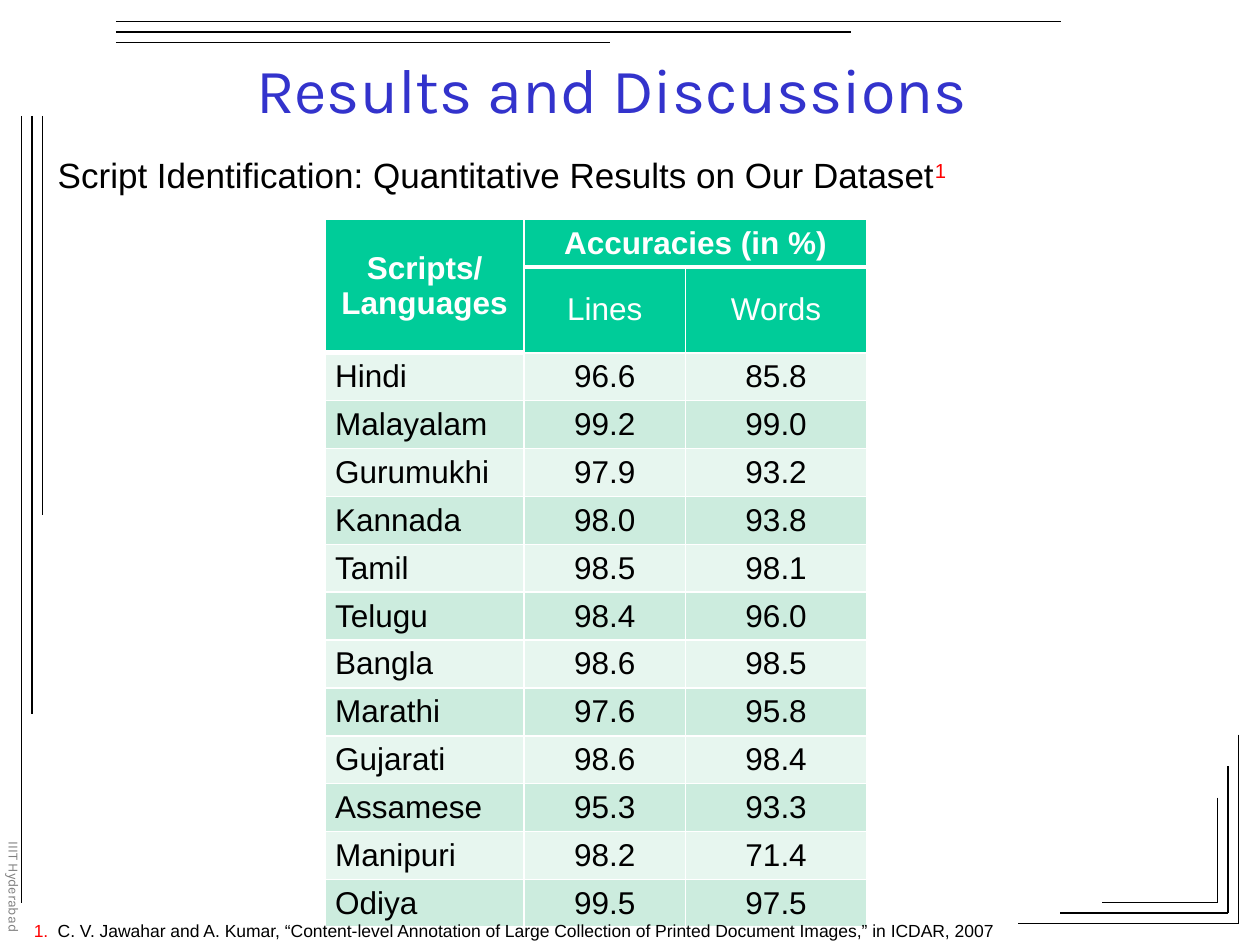
from lxml import etree
from pptx import Presentation
from pptx.dml.color import RGBColor
from pptx.enum.shapes import MSO_CONNECTOR
from pptx.enum.text import MSO_ANCHOR, PP_ALIGN
from pptx.oxml.ns import qn
from pptx.util import Inches, Pt

LINE = MSO_CONNECTOR.STRAIGHT
MIDDLE = MSO_ANCHOR.MIDDLE
LEFT, CENTER = PP_ALIGN.LEFT, PP_ALIGN.CENTER
BLACK, WHITE, RED, BLUE, GRAY = "000000", "FFFFFF", "FF0000", "3333CC", "808080"
GREEN, BANDS = "00CC99", ("E7F6EF", "CCECDE")
STEP = 1 / 12
SCORES = [
    ("Hindi", "96.6", "85.8"),
    ("Malayalam", "99.2", "99.0"),
    ("Gurumukhi", "97.9", "93.2"),
    ("Kannada", "98.0", "93.8"),
    ("Tamil", "98.5", "98.1"),
    ("Telugu", "98.4", "96.0"),
    ("Bangla", "98.6", "98.5"),
    ("Marathi", "97.6", "95.8"),
    ("Gujarati", "98.6", "98.4"),
    ("Assamese", "95.3", "93.3"),
    ("Manipuri", "98.2", "71.4"),
    ("Odiya", "99.5", "97.5"),
]


def color(value):
    """Turn a hex string into a colour."""
    return RGBColor.from_string(value)


def style(run, size, ink, face="Arial", bold=False):
    """Set the font of one run."""
    run.font.size, run.font.name, run.font.bold = Pt(size), face, bold
    run.font.color.rgb = color(ink)


def add_rule(slide, x1, y1, x2, y2):
    """Draw one thin black line."""
    rule = slide.shapes.add_connector(LINE, *map(Inches, (x1, y1, x2, y2)))
    rule.line.color.rgb = color(BLACK)
    rule.line.width = Pt(0.75)
    etree.SubElement(rule._element.spPr, qn("a:effectLst"))


def add_top(slide, x, y, widths):
    """Stack level rules downward from a corner."""
    for i, width in enumerate(widths):
        add_rule(slide, x, y + i * STEP, x + width, y + i * STEP)


def add_side(slide, x, y, heights):
    """Set upright rules rightward from a corner."""
    for i, height in enumerate(heights):
        add_rule(slide, x + i * STEP, y, x + i * STEP, y + height)


def add_corner(slide, x, y, width, height):
    """Nest three right angles into the bottom right of a box."""
    for i in range(3):
        right, low = x + width - i * STEP, y + height - i * STEP
        add_rule(slide, x + i * 4 * STEP, low, right, low)
        add_rule(slide, right, y + i * 3 * STEP, right, low)


def add_text(slide, box, parts, size, face="Arial", align=LEFT):
    """Place one paragraph of coloured parts in a box."""
    frame = slide.shapes.add_textbox(*map(Inches, box)).text_frame
    frame.word_wrap = True
    para = frame.paragraphs[0]
    para.alignment = align
    for text, ink in parts:
        run = para.add_run()
        run.text = text
        style(run, size, ink, face)
    return frame


def add_title(slide, box):
    """Place the centred title."""
    parts = [("Results and Discussions", BLUE)]
    add_text(slide, box, parts, 36, "Karla", CENTER).vertical_anchor = MIDDLE


def add_lead(slide, box):
    """Place the subtitle with its raised note mark."""
    text = "Script Identification: Quantitative Results on Our Dataset"
    frame = add_text(slide, box, [(text, BLACK), ("1", RED)], 20)
    frame.paragraphs[0].runs[1].font._element.set("baseline", "30000")


def add_label(slide, box):
    """Place the upright label at the left edge."""
    frame = add_text(slide, box, [("IIIT Hyderabad", GRAY)], 8, "Karla")
    frame._txBody.bodyPr.set("vert", "eaVert")


def add_note(slide, box):
    """Place the reference with a hanging number."""
    text = (
        "C. V. Jawahar and A. Kumar, “Content-level Annotation of Large "
        "Collection of Printed Document Images,” in ICDAR, 2007"
    )
    frame = add_text(slide, box, [("1.\t", RED), (text, BLACK)], 10)
    props = frame.paragraphs[0]._p.get_or_add_pPr()
    props.set("marL", str(Inches(0.19)))
    props.set("indent", str(-Inches(0.19)))


def set_edges(cell, low):
    """Draw white borders round a cell, the lower one of a given width."""
    props = cell._tc.get_or_add_tcPr()
    for i, (side, width) in enumerate(zip("LRTB", (1, 1, 1, low))):
        edge = etree.Element(qn(f"a:ln{side}"), w=str(Pt(width)))
        fill = etree.SubElement(edge, qn("a:solidFill"))
        etree.SubElement(fill, qn("a:srgbClr"), val=WHITE)
        props.insert(i, edge)


def set_cell(cell, text, fill, ink, align=CENTER, bold=False, low=1):
    """Fill and format one table cell."""
    cell.fill.solid()
    cell.fill.fore_color.rgb = color(fill)
    cell.vertical_anchor = MIDDLE
    cell.margin_left = cell.margin_right = Inches(0.08)
    cell.margin_top = cell.margin_bottom = Inches(0.04)
    set_edges(cell, low)
    cell.text_frame.text = text
    for para in cell.text_frame.paragraphs:
        para.alignment = align
        for run in para.runs:
            style(run, 18, ink, bold=bold)


def add_scores(slide, x, y, width, height):
    """Build the accuracy table with its two header rows."""
    box = map(Inches, (x, y, width, height))
    table = slide.shapes.add_table(len(SCORES) + 2, 3, *box).table
    heads = (0.37, 0.67)
    body = (height - sum(heads)) / len(SCORES)
    for row, tall in zip(table.rows, [*heads, *[body] * len(SCORES)]):
        row.height = Inches(tall)
    for col, wide in zip(table.columns, (1.58, 1.28, width - 2.86)):
        col.width = Inches(wide)
    top = ("Scripts/\nLanguages", "Accuracies (in %)", "")
    for c, text in enumerate(top):
        set_cell(table.cell(0, c), text, GREEN, WHITE, bold=True, low=3)
    for c, text in enumerate(("", "Lines", "Words")):
        set_cell(table.cell(1, c), text, GREEN, WHITE, low=1 if c else 3)
    table.cell(0, 0).merge(table.cell(1, 0))
    table.cell(0, 1).merge(table.cell(0, 2))
    for r, row in enumerate(SCORES):
        for c, text in enumerate(row):
            align = CENTER if c else LEFT
            set_cell(table.cell(r + 2, c), text, BANDS[r % 2], BLACK, align)


def main():
    """Build and save the slide."""
    deck = Presentation()
    deck.slide_width, deck.slide_height = Inches(10), Inches(7.5)
    slide = deck.slides.add_slide(deck.slide_layouts[6])
    add_top(slide, 0.92, 0.17, (7.5, 5.83, 3.92))
    add_side(slide, 0.17, 0.92, (6.25, 4.75, 3.17))
    add_corner(slide, 8.08, 5.83, 1.75, 1.5)
    add_label(slide, (-0.1, 6.58, 0.33, 0.92))
    add_title(slide, (0.61, 0.25, 8.49, 0.9))
    add_lead(slide, (0.36, 1.17, 7.89, 0.44))
    add_scores(slide, 2.58, 1.74, 4.3, 5.58)
    add_note(slide, (0.17, 7.25, 8.73, 0.27))
    deck.save("out.pptx")


if __name__ == "__main__":
    main()
